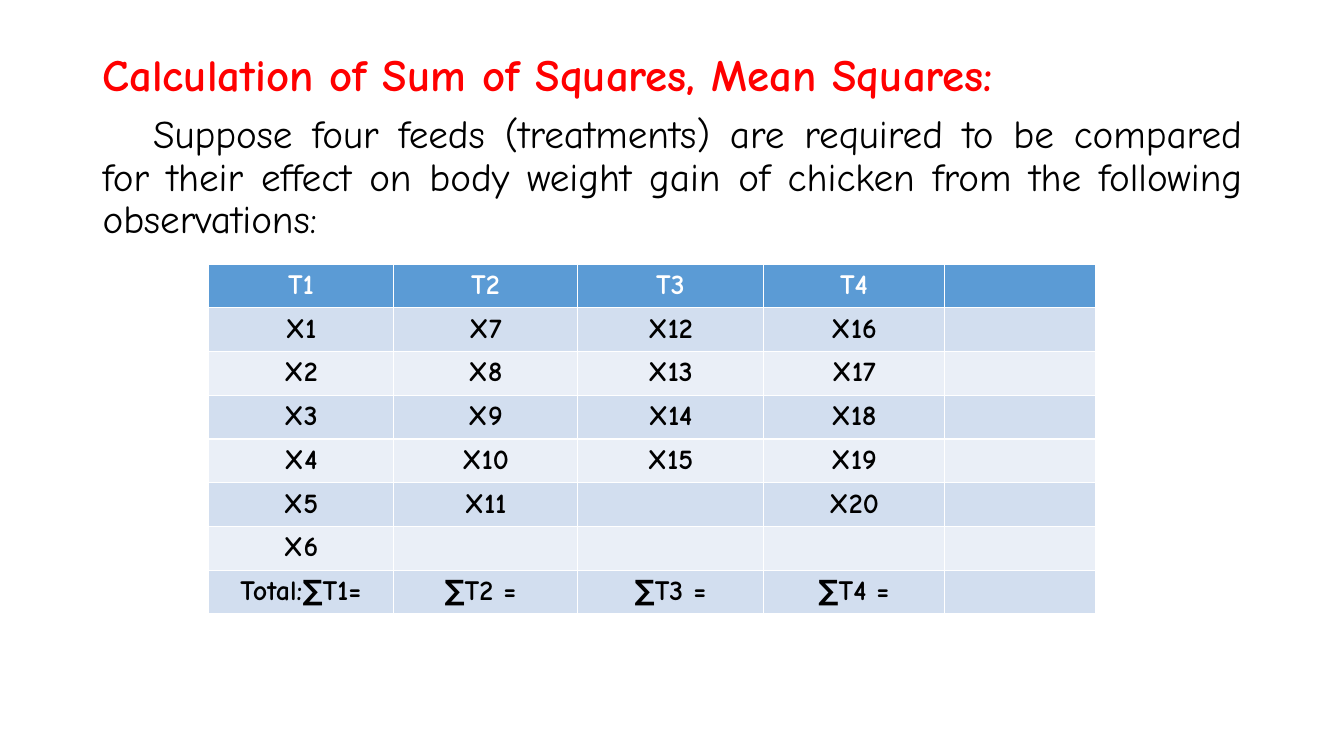
from pptx import Presentation
from pptx.dml.color import RGBColor
from pptx.enum.text import MSO_ANCHOR, PP_ALIGN
from pptx.util import Inches, Pt

FONT = "Comic Neue"
COLORS = {
    "title": "FF0000",
    "text": "000000",
    "header_text": "FFFFFF",
    "header": "5B9BD5",
    "dark_band": "D2DEEF",
    "light_band": "EAEFF7",
}


def style_text(paragraph, size, color, bold):
    for span in paragraph.runs:
        span.font.name = FONT
        span.font.size = Pt(size)
        span.font.bold = bold
        span.font.color.rgb = RGBColor.from_string(COLORS[color])


deck = Presentation()
deck.slide_width = Inches(13.33)
deck.slide_height = Inches(7.5)
page = deck.slides.add_slide(deck.slide_layouts[6])

box = page.shapes.add_textbox(Inches(0.92), Inches(0.47), Inches(11.5), Inches(6.28))
frame = box.text_frame
frame.word_wrap = True
frame.vertical_anchor = MSO_ANCHOR.TOP

title = frame.paragraphs[0]
title.text = "Calculation of Sum of Squares, Mean Squares:"
title.line_spacing = 0.9
style_text(title, 32, "title", True)

intro = frame.add_paragraph()
intro.text = (
    "\tSuppose four feeds (treatments) are required to be compared for their "
    "effect on body weight gain of chicken from the following observations:"
)
intro.alignment = PP_ALIGN.JUSTIFY
intro.line_spacing = 0.9
intro.space_before = Pt(10)
style_text(intro, 28, "text", False)

observations = [
    ["T1", "T2", "T3", "T4", ""],
    ["X1", "X7", "X12", "X16", ""],
    ["X2", "X8", "X13", "X17", ""],
    ["X3", "X9", "X14", "X18", ""],
    ["X4", "X10", "X15", "X19", ""],
    ["X5", "X11", "", "X20", ""],
    ["X6", "", "", "", ""],
    ["Total:∑T1=", "∑T2 = ", "∑T3 =", "∑T4 =", ""],
]
column_widths = [1.83, 1.83, 1.84, 1.8, 1.5]
row_height = 0.41

table = page.shapes.add_table(
    len(observations), len(column_widths),
    Inches(2.07), Inches(2.62),
    Inches(sum(column_widths)), Inches(row_height * len(observations)),
).table
for column, width in zip(table.columns, column_widths):
    column.width = Inches(width)

for row_index, values in enumerate(observations):
    table.rows[row_index].height = Inches(row_height)
    if row_index == 0:
        fill, color = "header", "header_text"
    else:
        fill, color = ("dark_band" if row_index % 2 else "light_band"), "text"
    for column_index, value in enumerate(values):
        cell = table.cell(row_index, column_index)
        cell.fill.solid()
        cell.fill.fore_color.rgb = RGBColor.from_string(COLORS[fill])
        if value:
            cell.text_frame.text = value
            paragraph = cell.text_frame.paragraphs[0]
            paragraph.alignment = PP_ALIGN.CENTER
            style_text(paragraph, 20, color, True)

deck.save("out.pptx")
